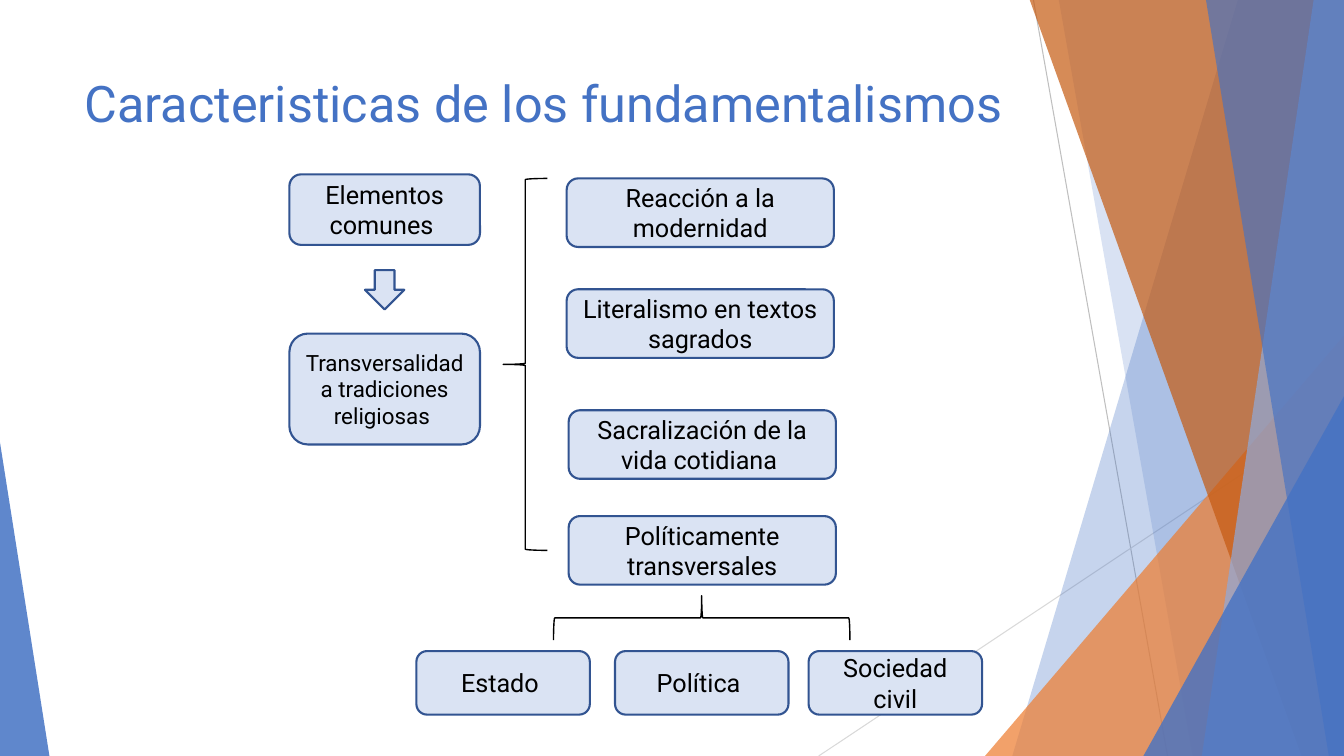
import pptx
import pptx.dml.color
import pptx.enum.shapes
import pptx.enum.text
import pptx.oxml
import pptx.oxml.ns
import pptx.util

Inches = pptx.util.Inches
Pt = pptx.util.Pt
RGBColor = pptx.dml.color.RGBColor
Shape = pptx.enum.shapes.MSO_SHAPE
Align = pptx.enum.text.PP_ALIGN
Anchor = pptx.enum.text.MSO_ANCHOR

BLUE = RGBColor(0x44, 0x72, 0xC4)
LIGHT_BLUE = RGBColor(0x8F, 0xAA, 0xDC)
PALE_BLUE = RGBColor(0xDA, 0xE3, 0xF3)
EDGE_BLUE = RGBColor(0x32, 0x54, 0x91)
ORANGE = RGBColor(0xED, 0x7D, 0x31)
RUST = RGBColor(0xC5, 0x5A, 0x11)
GREY = RGBColor(0xBF, 0xBF, 0xBF)
LIGHT_GREY = RGBColor(0xD9, 0xD9, 0xD9)
BLACK = RGBColor(0, 0, 0)

WIDTH, HEIGHT = 13.33, 7.5


def write(shape, text, size=18, color=BLACK, align=Align.CENTER, anchor=Anchor.MIDDLE):
    frame = shape.text_frame
    frame.word_wrap = True
    frame.auto_size = pptx.enum.text.MSO_AUTO_SIZE.NONE
    frame.vertical_anchor = anchor
    para = frame.paragraphs[0]
    para.alignment = align
    span = para.add_run()
    span.text = text
    span.font.name = "Roboto"
    span.font.size = Pt(size)
    span.font.color.rgb = color


def paint(shape, fill=None, opacity=100, line=None, weight=1.5):
    shape.shadow.inherit = False
    if fill is None:
        shape.fill.background()
    else:
        shape.fill.solid()
        shape.fill.fore_color.rgb = fill
        if opacity < 100:
            color = shape.fill._xPr.find(".//" + pptx.oxml.ns.qn("a:srgbClr"))
            alpha = pptx.oxml.parse_xml(
                f'<a:alpha {pptx.oxml.ns.nsdecls("a")} val="{opacity * 1000}"/>')
            color.append(alpha)
    if line is None:
        shape.line.fill.background()
    else:
        shape.line.color.rgb = line
        shape.line.width = Pt(weight)


deck = pptx.Presentation()
deck.slide_width = Inches(WIDTH)
deck.slide_height = Inches(HEIGHT)
page = deck.slides.add_slide(deck.slide_layouts[5])

for x1, y1, x2, y2, color in [
    (10.25, 0, 11.58, HEIGHT, GREY),
    (WIDTH, 4.03, 8.12, HEIGHT, LIGHT_GREY),
]:
    ray = page.shapes.add_connector(
        pptx.enum.shapes.MSO_CONNECTOR.STRAIGHT,
        Inches(x1), Inches(y1), Inches(x2), Inches(y2))
    ray.line.color.rgb = color
    ray.line.width = Pt(0.75)
    ray._element.spPr.append(
        pptx.oxml.parse_xml(f'<a:effectLst {pptx.oxml.ns.nsdecls("a")}/>'))

facets = [
    ("band", (12.28, 10.04), BLUE, 30),
    ("band", (10.5, 11.83), BLUE, 20),
    ("triangle", (9.77, 3.33, 3.56, 1), ORANGE, 72),
    ("band", (10.21, 12.91), RUST, 70),
    ("band", (13.03, 11.92), LIGHT_BLUE, 70),
    ("band", (11.96, 13.18), BLUE, 65),
    ("triangle", (11.34, 3.93, 1.99, 1), BLUE, 80),
    ("triangle", (0, 4.39, 0.49, 0), BLUE, 85),
]
for kind, place, color, opacity in facets:
    if kind == "band":
        top_x, bottom_x = place
        outline = page.shapes.build_freeform(Inches(top_x), Inches(-0.01))
        outline.add_line_segments([
            (Inches(WIDTH), Inches(-0.01)),
            (Inches(WIDTH), Inches(HEIGHT)),
            (Inches(bottom_x), Inches(HEIGHT)),
        ], close=True)
        facet = outline.convert_to_shape()
    else:
        left, top, width, apex = place
        facet = page.shapes.add_shape(
            Shape.ISOSCELES_TRIANGLE, Inches(left), Inches(top),
            Inches(width), Inches(HEIGHT - top))
        facet.adjustments[0] = apex
    paint(facet, color, opacity)

title = page.shapes.title
title.left, title.top = Inches(0.74), Inches(0.67)
title.width, title.height = Inches(9.4), Inches(1.44)
write(title, "Caracteristicas de los fundamentalismos", size=36, color=BLUE,
      align=Align.LEFT, anchor=Anchor.TOP)

boxes = [
    ("Elementos comunes ", 2.87, 1.73, 1.89, 0.7, 18),
    ("Transversalidad a tradiciones religiosas ", 2.87, 3.31, 1.89, 1.1, 16),
    ("Reacción a la modernidad", 5.62, 1.77, 2.65, 0.68, 18),
    ("Literalismo en textos sagrados", 5.62, 2.87, 2.65, 0.68, 18),
    ("Sacralización de la vida cotidiana ", 5.64, 4.07, 2.65, 0.68, 18),
    ("Políticamente transversales", 5.64, 5.12, 2.65, 0.68, 18),
    ("Estado ", 4.13, 6.46, 1.72, 0.63, 18),
    ("Política ", 6.1, 6.46, 1.72, 0.63, 18),
    ("Sociedad civil", 8.02, 6.46, 1.72, 0.63, 18),
]
for text, left, top, width, height, size in boxes:
    box = page.shapes.add_shape(
        Shape.ROUNDED_RECTANGLE, Inches(left), Inches(top),
        Inches(width), Inches(height))
    paint(box, PALE_BLUE, line=EDGE_BLUE)
    write(box, text, size=size)

arrow = page.shapes.add_shape(
    Shape.RIGHT_ARROW, Inches(3.62), Inches(2.68), Inches(0.39), Inches(0.39))
arrow.rotation = 90
paint(arrow, PALE_BLUE, line=EDGE_BLUE)

for left, top, height, angle in [(4.99, 1.77, 3.69, 180), (6.74, 4.66, 2.94, 270)]:
    brace = page.shapes.add_shape(
        Shape.RIGHT_BRACE, Inches(left), Inches(top), Inches(0.44), Inches(height))
    brace.adjustments[0] = 0.027
    brace.rotation = angle
    paint(brace, line=BLACK, weight=1)

deck.save("out.pptx")
